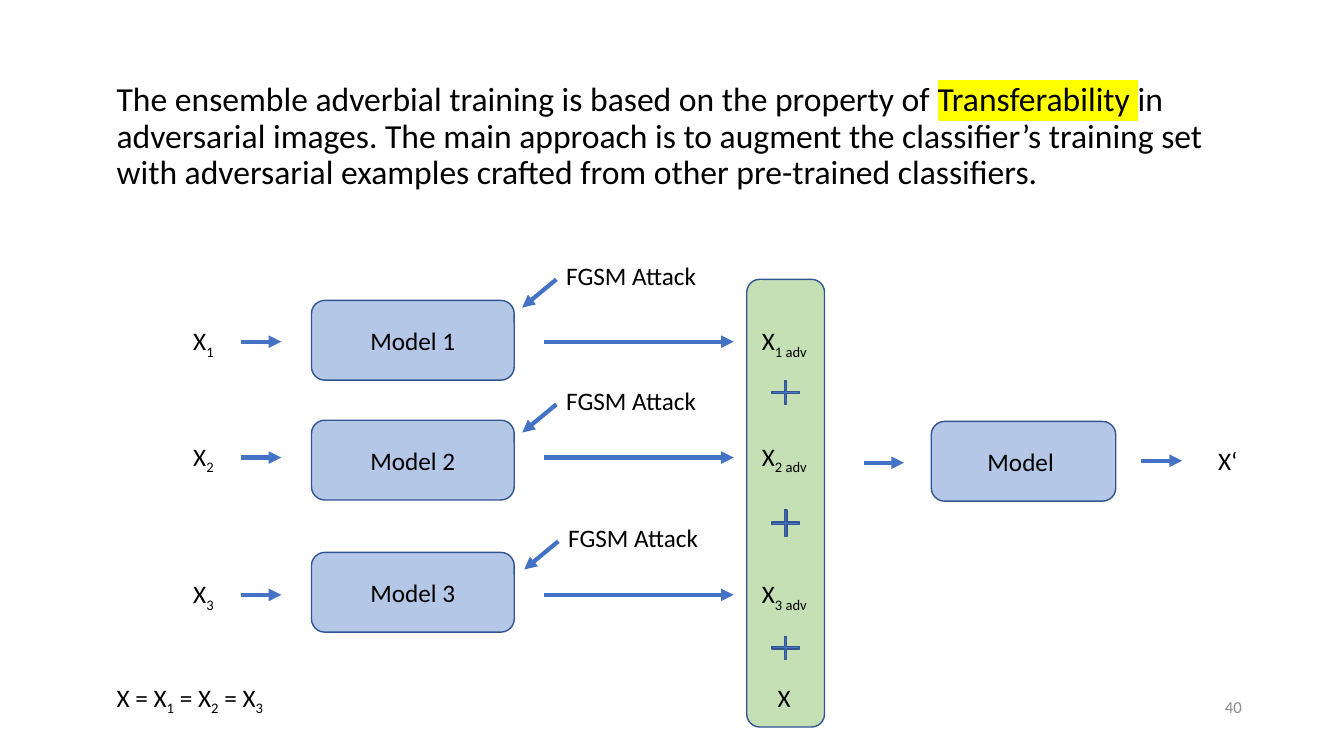
from lxml.etree import SubElement
from pptx import Presentation
from pptx.dml.color import RGBColor
from pptx.enum.shapes import MSO_CONNECTOR, MSO_SHAPE
from pptx.enum.text import MSO_ANCHOR, PP_ALIGN
from pptx.oxml import parse_xml
from pptx.oxml.ns import nsdecls, qn
from pptx.util import Cm, Pt

BLACK, BLUE, OUTLINE = "000000", "4472C4", "325491"
MODEL_FILL, ENSEMBLE_FILL = "B4C7E7", "C5E0B4"
LABEL_HEIGHT = 1.02

# model top, middle of the row, attack arrow start (x, y)
ROWS = [
    (7.57, 8.61, 14.02, 7.04),
    (10.59, 11.53, 14.02, 10.19),
    (13.92, 14.99, 14.07, 13.64),
]
# top and height of each plus sign
PLUSES = [(9.5, 0.79), (12.73, 0.91), (15.93, 0.79)]


def color(hex_string):
    return RGBColor.from_string(hex_string)


def add_run(paragraph, text, size=18, hex_color=BLACK):
    run = paragraph.add_run()
    run.text = text
    for name, value in {"name": "Calibri", "size": Pt(size)}.items():
        setattr(run.font, name, value)
    run.font.color.rgb = color(hex_color)
    return run


def add_text_box(slide, left, top, width, height=LABEL_HEIGHT):
    box = slide.shapes.add_textbox(Cm(left), Cm(top), Cm(width), Cm(height))
    box.text_frame.word_wrap = True
    return box.text_frame


def add_label(slide, text, left, top, width):
    """Text between bars is set as a subscript."""
    paragraph = add_text_box(slide, left, top, width).paragraphs[0]
    for index, part in enumerate(text.split("|")):
        if part:
            run = add_run(paragraph, part)
            if index % 2:
                run._r.get_or_add_rPr().set("baseline", "-25000")


def add_block(slide, kind, fill, left, top, width, height):
    shape = slide.shapes.add_shape(kind, Cm(left), Cm(top), Cm(width), Cm(height))
    shape.shadow.inherit = False
    shape.fill.solid()
    shape.fill.fore_color.rgb = color(fill)
    shape.line.color.rgb = color(OUTLINE)
    shape.line.width = Pt(1)
    return shape


def add_model(slide, text, left, top, width):
    shape = add_block(slide, MSO_SHAPE.ROUNDED_RECTANGLE, MODEL_FILL,
                      left, top, width, 2.01)
    shape.text_frame.vertical_anchor = MSO_ANCHOR.MIDDLE
    paragraph = shape.text_frame.paragraphs[0]
    paragraph.alignment = PP_ALIGN.CENTER
    add_run(paragraph, text)


def add_arrow(slide, x1, y1, x2, y2):
    arrow = slide.shapes.add_connector(
        MSO_CONNECTOR.STRAIGHT, Cm(x1), Cm(y1), Cm(x2), Cm(y2))
    arrow.line.color.rgb = color(BLUE)
    arrow.line.width = Pt(3)
    SubElement(arrow.line._get_or_add_ln(), qn("a:tailEnd"), type="triangle")
    SubElement(arrow._element.spPr, qn("a:effectLst"))


def add_introduction(slide):
    paragraph = add_text_box(slide, 2.69, 1.96, 29.21, 4.32).paragraphs[0]
    for name, value in {"line_spacing": 0.9, "space_before": Pt(10)}.items():
        setattr(paragraph, name, value)
    add_run(paragraph, "The ensemble adverbial training is based on the property of ", 24)
    marked = add_run(paragraph, "Transferability ", 24)
    add_run(paragraph, "in adversarial images. The main approach is to augment the "
            "classifier’s training set with adversarial examples crafted from "
            "other pre-trained classifiers.", 24)
    highlight = parse_xml(
        f'<a:highlight {nsdecls("a")}><a:srgbClr val="FFFF00"/></a:highlight>')
    marked._r.get_or_add_rPr().find(qn("a:solidFill")).addnext(highlight)


def add_row(slide, number, model_top, middle, attack_x, attack_y):
    label_top = middle - 0.53
    add_label(slide, f"X|{number}", 4.62, label_top, 1.45)
    add_arrow(slide, 6.07, middle, 7.09, middle)
    add_model(slide, f"Model {number}", 7.85, model_top, 5.11)
    add_arrow(slide, attack_x, attack_y, attack_x - 0.86, attack_y + 0.71)
    add_label(slide, "FGSM Attack", attack_x, attack_y - 0.61, 4.17)
    add_arrow(slide, 13.72, middle, 18.49, middle)
    add_label(slide, f"X|{number} adv", 18.95, label_top, 1.96)


def add_page_number(slide):
    frame = add_text_box(slide, 23.93, 17.3, 7.62)
    frame.vertical_anchor = MSO_ANCHOR.MIDDLE
    frame.paragraphs[0].alignment = PP_ALIGN.RIGHT
    add_run(frame.paragraphs[0], "40", 12, "8C8C8C")


def main():
    presentation = Presentation()
    presentation.slide_width, presentation.slide_height = Cm(33.87), Cm(19.05)
    slide = presentation.slides.add_slide(presentation.slide_layouts[6])

    add_introduction(slide)

    # Ensemble column and the rows that feed it
    add_block(slide, MSO_SHAPE.ROUNDED_RECTANGLE, ENSEMBLE_FILL,
              18.82, 7.04, 1.96, 11.28)
    for number, row in enumerate(ROWS, start=1):
        add_row(slide, number, *row)
    for top, height in PLUSES:
        plus = add_block(slide, MSO_SHAPE.MATH_PLUS, BLUE, 19.33, top, 0.94, height)
        plus.adjustments[0] = 0.07
    add_label(slide, "X", 19.35, 17.07, 1.45)

    # Final model and its output
    add_arrow(slide, 21.77, 11.66, 22.78, 11.66)
    add_model(slide, "Model ", 23.47, 10.62, 4.65)
    add_arrow(slide, 28.75, 11.61, 29.79, 11.61)
    add_label(slide, "X‘", 30.45, 11.1, 1.02)

    # Footer
    add_label(slide, "X = X|1| = X|2| = X|3", 2.69, 17.07, 4.39)
    add_page_number(slide)

    presentation.save("out.pptx")


if __name__ == "__main__":
    main()
